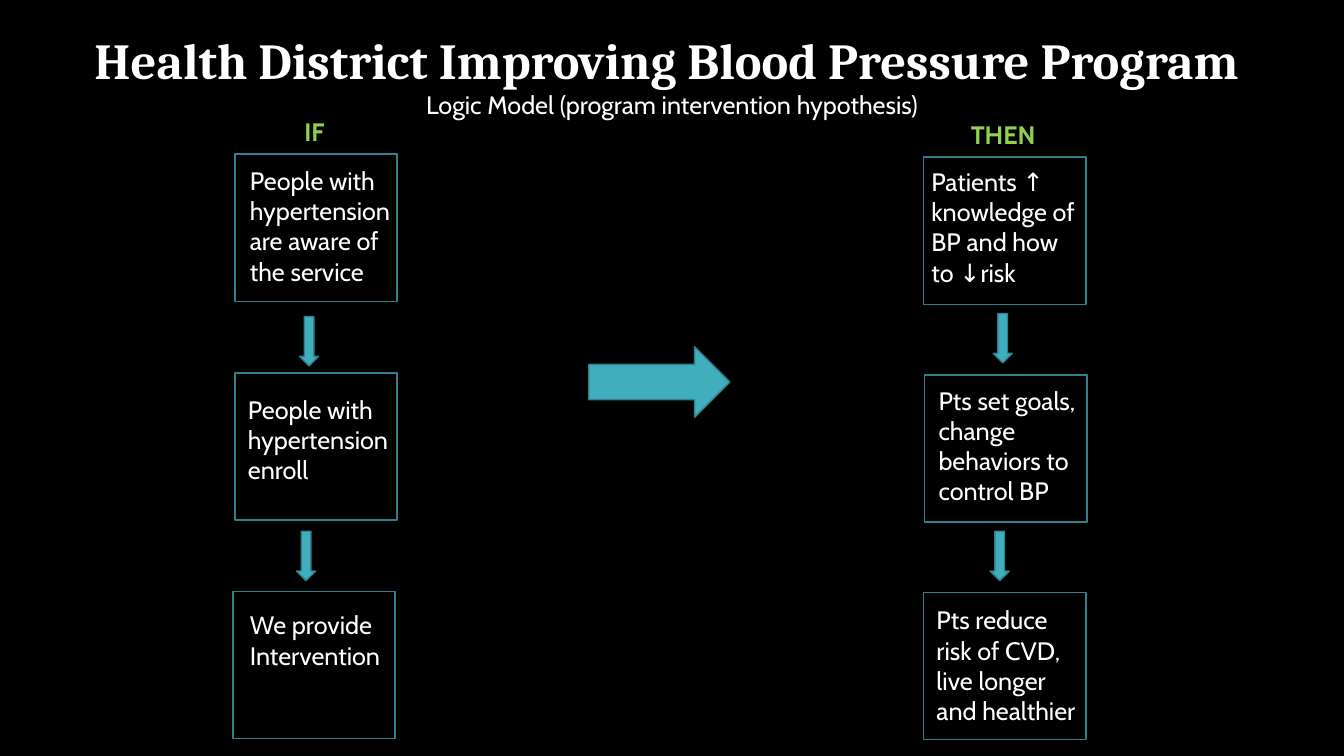
from pptx import Presentation
from pptx.dml.color import RGBColor
from pptx.enum import shapes, text
from pptx.util import Inches, Pt

BLACK = RGBColor(0x00, 0x00, 0x00)
WHITE = RGBColor(0xFF, 0xFF, 0xFF)
GREEN = RGBColor(0x92, 0xD0, 0x50)
TEAL = RGBColor(0x41, 0xAE, 0xBD)
EDGE = RGBColor(0x30, 0x81, 0x8C)

BOX_W, BOX_H = 1.61, 1.46
ARROW_W, ARROW_H = 0.49, 0.19

# Each step: lines, box shift, text left, top and width relative to the box
IF_STEPS = [
    (["People with hypertension are aware of the service"], 0, 0.05, 0.06, 1.59),
    (["People with hypertension enroll"], 0, 0.03, 0.16, 1.61),
    (["We provide", "Intervention"], -0.02, 0.07, 0.13, 1.51),
]
THEN_STEPS = [
    (["Patients ↑ knowledge of", "BP and how to ↓risk"], 0, -0.02, 0.04, 1.7),
    (["Pts set goals, change behaviors to control BP"], 0.01, 0.04, 0.05, 1.62),
    (["Pts reduce risk of CVD, live longer and healthier"], 0, 0.03, 0.07, 1.63),
]


def write(para, words, size=18, font="Cabin", color=WHITE, bold=False, align=None):
    run = para.add_run()
    run.text = words
    run.font.size = Pt(size)
    run.font.name = font
    run.font.color.rgb = color
    run.font.bold = bold
    para.alignment = align


def label(slide, lines, x, y, w, h, wrap=True, **style):
    box = slide.shapes.add_textbox(Inches(x), Inches(y), Inches(w), Inches(h))
    frame = box.text_frame
    frame.word_wrap = wrap
    for i, line in enumerate(lines):
        para = frame.add_paragraph() if i else frame.paragraphs[0]
        write(para, line, **style)


def block(slide, kind, x, y, w, h, fill=None, turn=0):
    shape = slide.shapes.add_shape(kind, Inches(x), Inches(y), Inches(w), Inches(h))
    shape.shadow.inherit = False
    shape.rotation = turn
    shape.line.color.rgb = EDGE
    shape.line.width = Pt(1)
    if fill is None:
        shape.fill.background()
    else:
        shape.fill.solid()
        shape.fill.fore_color.rgb = fill


def header(slide, x, y, w, h):
    title = slide.shapes.title
    title.left, title.top, title.width, title.height = map(Inches, (x, y, w, h))
    frame = title.text_frame
    frame.word_wrap = True
    frame.auto_size = text.MSO_AUTO_SIZE.NONE
    frame.vertical_anchor = text.MSO_ANCHOR.TOP
    center = text.PP_ALIGN.CENTER
    write(frame.paragraphs[0], "Health District Improving Blood Pressure Program ",
          size=36, font="Cambria", bold=True, align=center)
    write(frame.add_paragraph(), "Logic Model (program intervention hypothesis)",
          align=center)


def column(slide, x, y, pitch, name, name_dx, name_w, steps, arrow_dx, arrow_ys):
    # Heading
    label(slide, [name], x + name_dx, y - 0.43, name_w, 0.4,
          wrap=False, color=GREEN, bold=True)

    # Boxes with their text
    for i, (lines, shift, dx, dy, w) in enumerate(steps):
        left, top = x + shift, y + i * pitch
        block(slide, shapes.MSO_SHAPE.RECTANGLE, left, top, BOX_W, BOX_H)
        label(slide, lines, left + dx, top + dy, w, 1.31)

    # Arrows pointing down between the boxes
    for i, dy in enumerate(arrow_ys):
        block(slide, shapes.MSO_SHAPE.RIGHT_ARROW, x + arrow_dx - 0.03 * i, y + dy,
              ARROW_W, ARROW_H, fill=TEAL, turn=90)


def main():
    deck = Presentation()
    deck.slide_width, deck.slide_height = Inches(13.33), Inches(7.5)
    slide = deck.slides.add_slide(deck.slide_layouts[5])
    slide.background.fill.solid()
    slide.background.fill.fore_color.rgb = BLACK

    header(slide, 0, 0.24, 13.33, 1.01)
    column(slide, 2.33, 1.53, 2.17, "IF", 0.59, 0.4, IF_STEPS, 0.49, (1.76, 3.89))
    column(slide, 9.16, 1.56, 2.16, "THEN", 0.37, 0.85, THEN_STEPS, 0.54, (1.7, 3.86))

    # Large arrow from IF to THEN
    block(slide, shapes.MSO_SHAPE.RIGHT_ARROW, 5.84, 3.44, 1.4, 0.7, fill=TEAL)

    deck.save("out.pptx")


if __name__ == "__main__":
    main()
